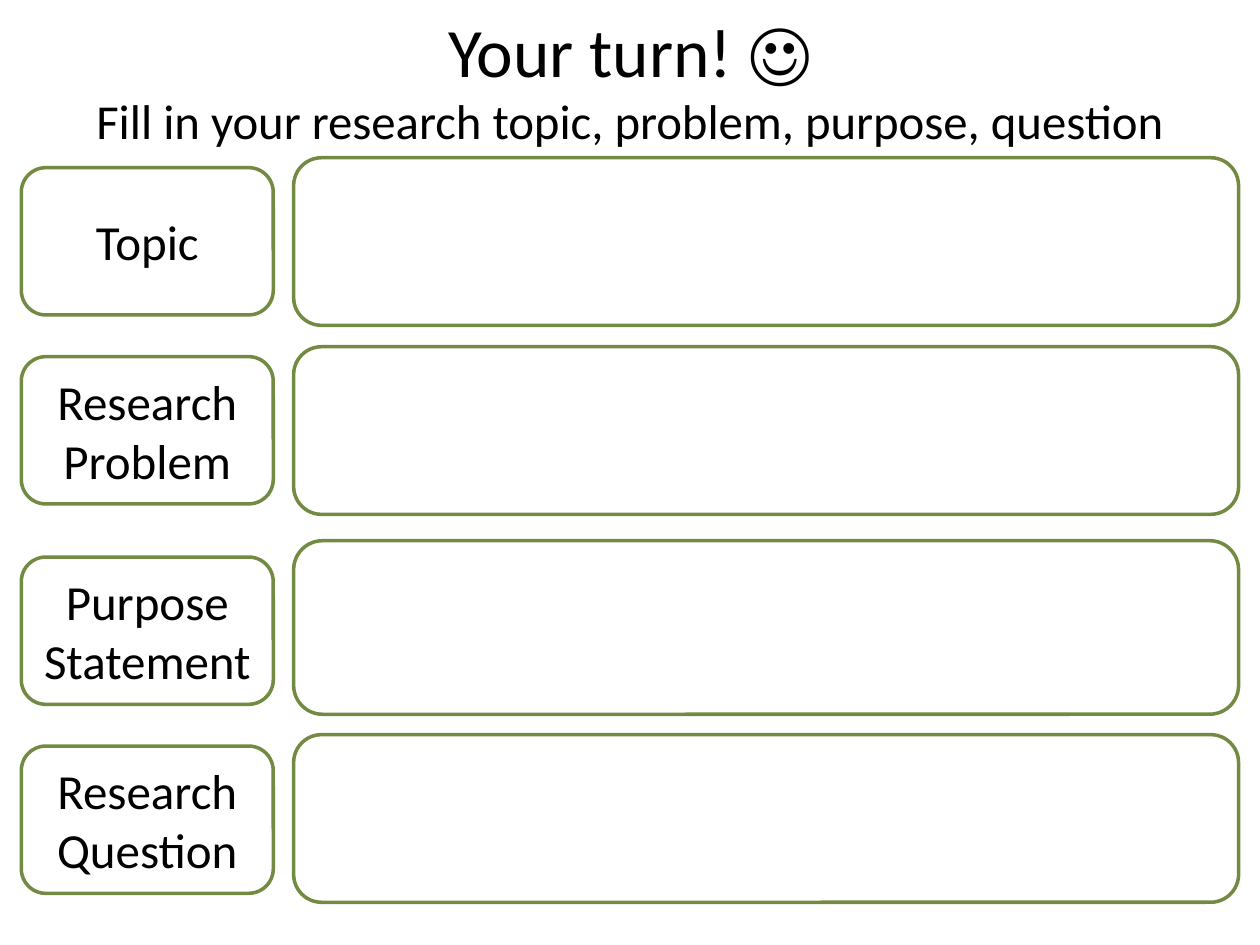
from pptx import Presentation
from pptx.dml.color import RGBColor
from pptx.enum.shapes import MSO_SHAPE
from pptx.enum.text import MSO_ANCHOR, PP_ALIGN
from pptx.util import Cm, Pt

ROUNDED = MSO_SHAPE.ROUNDED_RECTANGLE
MIDDLE = MSO_ANCHOR.MIDDLE
CENTER = PP_ALIGN.CENTER

LABEL_LEFT, LABEL_WIDTH, LABEL_HEIGHT = 0.43, 5.08, 2.97
ANSWER_LEFT, ANSWER_WIDTH = 5.92, 19.05

# label, label top, answer top, answer height (cm)
ROWS = [
    ("Topic", 3.38, 3.18, 3.38),
    ("Research Problem", 7.19, 6.99, 3.38),
    ("Purpose Statement", 11.23, 10.9, 3.5),
    ("Research Question", 15.04, 14.81, 3.38),
]


def color(value):
    return RGBColor.from_string(value)


class Worksheet:
    font = "Calibri"
    text_color = "000000"
    fill_color = "FFFFFF"
    border_color = "738A42"
    border_width = 2
    label_size = 28

    def __init__(self, slide):
        self.slide = slide

    def add_run(self, paragraph, text, size):
        run = paragraph.add_run()
        run.text = text
        run.font.name = self.font
        run.font.size = Pt(size)
        run.font.color.rgb = color(self.text_color)

    def centered_paragraph(self, shape):
        frame = shape.text_frame
        frame.word_wrap = True
        frame.vertical_anchor = MIDDLE
        paragraph = frame.paragraphs[0]
        paragraph.alignment = CENTER
        return paragraph

    def add_heading(self, left, top, width, height, lines):
        """Add a text box whose (text, size) lines share one paragraph."""
        box = self.slide.shapes.add_textbox(Cm(left), Cm(top), Cm(width), Cm(height))
        paragraph = self.centered_paragraph(box)
        for index, (text, size) in enumerate(lines):
            if index:
                paragraph.add_line_break()
            self.add_run(paragraph, text, size)

    def add_box(self, left, top, width, height, text=""):
        shape = self.slide.shapes.add_shape(
            ROUNDED, Cm(left), Cm(top), Cm(width), Cm(height))
        shape.shadow.inherit = False
        shape.fill.solid()
        shape.fill.fore_color.rgb = color(self.fill_color)
        shape.line.color.rgb = color(self.border_color)
        shape.line.width = Pt(self.border_width)
        if text:
            self.add_run(self.centered_paragraph(shape), text, self.label_size)


def main():
    presentation = Presentation()
    presentation.slide_width, presentation.slide_height = Cm(25.4), Cm(19.05)
    slide = presentation.slides.add_slide(presentation.slide_layouts[6])
    worksheet = Worksheet(slide)

    worksheet.add_heading(1.27, 0, 22.86, 3.18, [
        ("Your turn! ☺", 39.6),
        ("Fill in your research topic, problem, purpose, question", 27.9),
    ])
    for label, label_top, answer_top, answer_height in ROWS:
        worksheet.add_box(LABEL_LEFT, label_top, LABEL_WIDTH, LABEL_HEIGHT, label)
        worksheet.add_box(ANSWER_LEFT, answer_top, ANSWER_WIDTH, answer_height)

    presentation.save("out.pptx")


if __name__ == "__main__":
    main()
